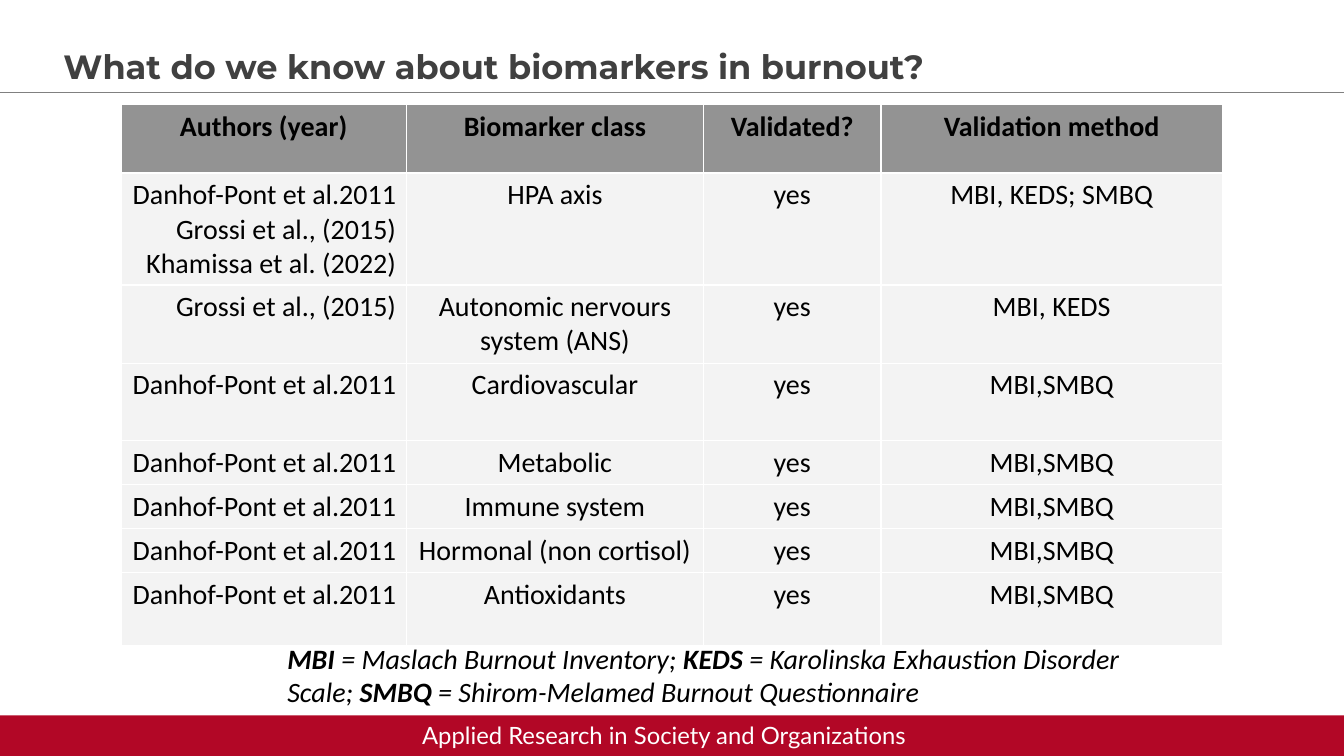
"""Builds the slide on biomarkers in burnout."""
from dataclasses import dataclass

from pptx import Presentation
from pptx import util as u
from pptx.dml import color
from pptx.enum import shapes, text
from pptx.oxml import ns
from lxml import etree

LEFT, MID, RIGHT = text.PP_ALIGN.LEFT, text.PP_ALIGN.CENTER, text.PP_ALIGN.RIGHT
WIDE, HIGH = 33.87, 19.05
RED, BLACK = "B20726", "000000"


@dataclass
class Box:
    left: float
    top: float
    width: float
    height: float

    def cm(self) -> list:
        return [u.Cm(n) for n in (self.left, self.top, self.width, self.height)]


@dataclass
class Face:
    name: str
    size: float
    tint: str = BLACK
    bold: bool = False
    slant: bool = False


@dataclass
class Row:
    height: float
    cells: tuple


def rgb(code: str) -> color.RGBColor:
    return color.RGBColor.from_string(code)


def style(para, face: Face, align=LEFT) -> None:
    font = para.font
    font.name, font.size = face.name, u.Pt(face.size)
    font.bold, font.italic = face.bold, face.slant
    font.color.rgb = rgb(face.tint)
    para.alignment = align


def label(slide, box: Box, face: Face, parts: list):
    frame = slide.shapes.add_textbox(*box.cm()).text_frame
    frame.word_wrap = True
    para = frame.paragraphs[0]
    style(para, face)
    for words, bold in parts:
        run = para.add_run()
        run.text = words
        if bold != face.bold:
            run.font.bold = bold


def bar(slide, box: Box, fill: str) -> None:
    shape = slide.shapes.add_shape(shapes.MSO_SHAPE.RECTANGLE, *box.cm())
    shape.shadow.inherit = False
    shape.fill.solid()
    shape.fill.fore_color.rgb = rgb(fill)
    shape.line.fill.background()


def rule(slide, top: float, tint: str) -> None:
    line = slide.shapes.add_connector(
        shapes.MSO_CONNECTOR.STRAIGHT, u.Cm(WIDE), u.Cm(top), u.Cm(0), u.Cm(top))
    line.line.color.rgb = rgb(tint)
    line.line.width = u.Pt(0.25)
    etree.SubElement(line._element.spPr, ns.qn("a:effectLst"))


def grid(slide, box: Box, widths: tuple, rows: list) -> None:
    table = slide.shapes.add_table(len(rows), len(widths), *box.cm()).table
    for col, width in zip(table.columns, widths):
        col.width = u.Cm(width)
    for i, row in enumerate(rows):
        head = i == 0
        table.rows[i].height = u.Cm(row.height)
        for j, words in enumerate(row.cells):
            cell = table.cell(i, j)
            cell.fill.solid()
            cell.fill.fore_color.rgb = rgb("939393" if head else "F3F3F3")
            cell.text_frame.text = words
            for para in cell.text_frame.paragraphs:
                style(para, Face("Calibri", 20, bold=head),
                      RIGHT if j == 0 and not head else MID)


DAN, GRO, BOTH = "Danhof-Pont et al.2011", "Grossi et al., (2015)", "MBI,SMBQ"
ROWS = [
    Row(1.72, ("Authors (year)", "Biomarker class", "Validated?", "Validation method")),
    Row(2.82, (f"{DAN}\n{GRO}\nKhamissa et al. (2022)", "HPA axis", "yes",
               "MBI, KEDS; SMBQ")),
    Row(1.97, (GRO, "Autonomic nervours system (ANS)", "yes", "MBI, KEDS")),
    Row(1.95, (DAN, "Cardiovascular", "yes", BOTH)),
    Row(1.11, (DAN, "Metabolic", "yes", BOTH)),
    Row(1.11, (DAN, "Immune system", "yes", BOTH)),
    Row(1.11, (DAN, "Hormonal (non cortisol)", "yes", BOTH)),
    Row(1.85, (DAN, "Antioxidants", "yes", BOTH)),
]
NOTE = [
    ("MBI", True), (" = Maslach Burnout Inventory; ", False),
    ("KEDS", True), (" = Karolinska Exhaustion Disorder Scale; ", False),
    ("SMBQ", True), (" = Shirom-Melamed Burnout Questionnaire", False),
]


def main() -> None:
    deck = Presentation()
    deck.slide_width, deck.slide_height = u.Cm(WIDE), u.Cm(HIGH)
    slide = deck.slides.add_slide(deck.slide_layouts[6])
    rule(slide, 2.32, "808080")
    bar(slide, Box(0, 18.03, WIDE, 1.02), RED)
    label(slide, Box(1.35, 1.04, 29.95, 1.27),
          Face("Montserrat", 24, "404040", bold=True),
          [("What do we know about biomarkers in burnout?", True)])
    label(slide, Box(10.39, 18.03, 12.88, 0.99), Face("Lato", 17, "FFFFFF"),
          [("Applied Research in Society and Organizations", False)])
    grid(slide, Box(3.05, 2.64, 27.76, 13.64), (7.19, 7.49, 4.47, 8.61), ROWS)
    label(slide, Box(6.99, 16.03, 21.89, 2.01), Face("Calibri", 20, slant=True), NOTE)
    deck.save("out.pptx")


if __name__ == "__main__":
    main()
